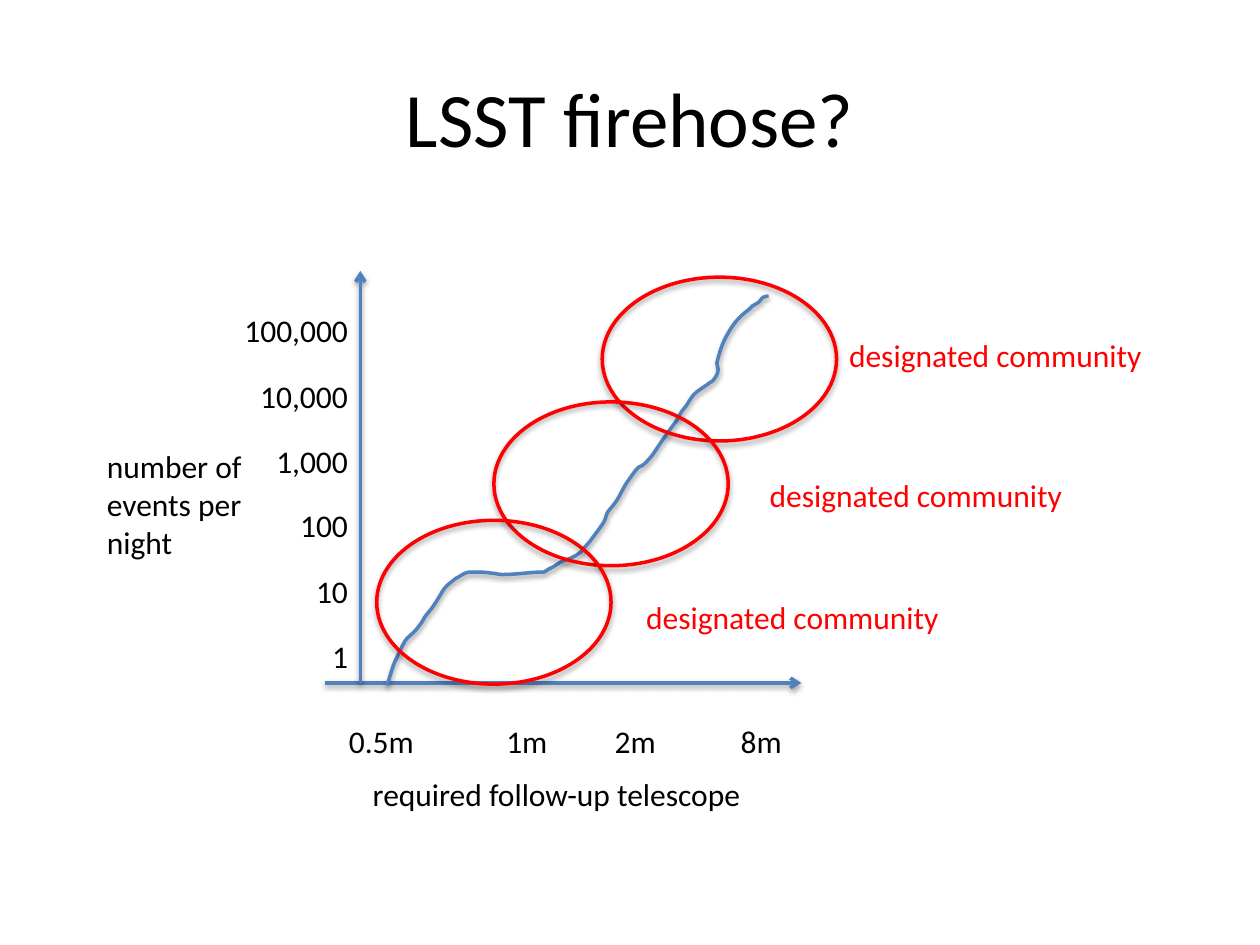
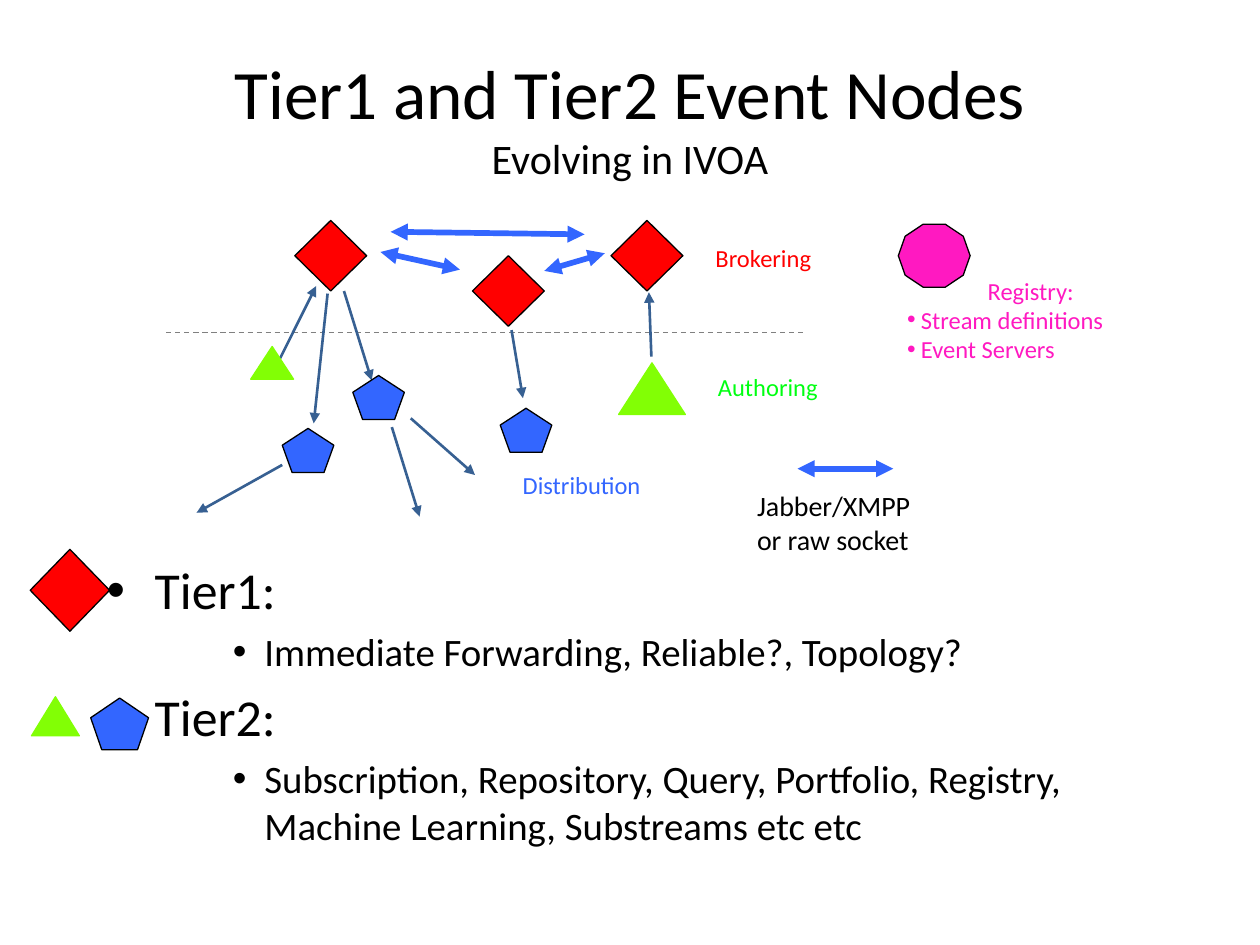
"""Build two slides on event follow-up: a telescope graph and a node network."""
from dataclasses import dataclass
from typing import Any

import lxml.etree
import pptx
import pptx.dml.color
import pptx.enum.dml
import pptx.enum.shapes
import pptx.enum.text
import pptx.oxml.ns
import pptx.slide
import pptx.util

PX = 9144
FACE = "Calibri"
BLACK, RED, AXIS = "000000", "FF0000", "4F81BD"
NAVY, BLUE, LIME = "376092", "3366FF", "82FF05"
GREEN, PINK, GRAY = "00FF12", "FF19C1", "808080"

KIND = pptx.enum.shapes.MSO_SHAPE
ALIGN = pptx.enum.text.PP_ALIGN
Slide = pptx.slide.Slide


@dataclass(frozen=True)
class Note:
    text: str
    x: int
    y: int
    w: int
    h: int = 40
    size: float = 18
    hue: str = BLACK
    wrap: bool = True
    align: Any = ALIGN.LEFT


@dataclass(frozen=True)
class Node:
    kind: Any
    x: int
    y: int
    w: int
    h: int
    fill: str | None
    edge: str = BLACK
    width: float = 0.75


@dataclass(frozen=True)
class Link:
    x: int
    y: int
    to_x: int
    to_y: int
    hue: str = NAVY
    width: float = 1.5
    head: str | None = None
    tail: str | None = "triangle"


def emu(*sizes: int) -> list[int]:
    return [size * PX for size in sizes]


def color(code: str) -> pptx.dml.color.RGBColor:
    return pptx.dml.color.RGBColor.from_string(code)


def sub(parent: Any, tag: str, **attrs: Any) -> Any:
    values = {key: str(value) for key, value in attrs.items()}
    return lxml.etree.SubElement(parent, pptx.oxml.ns.qn(f"a:{tag}"), values)


def shade(item: Any, gap: int) -> None:
    props = item._element.spPr
    found = props.find(pptx.oxml.ns.qn("a:effectLst"))
    effects = sub(props, "effectLst") if found is None else found
    cast = sub(effects, "outerShdw", blurRad=40000, dist=gap, dir=5400000, rotWithShape=0)
    tint = sub(cast, "srgbClr", val=BLACK)
    sub(tint, "alpha", val=38000 if gap == 20000 else 35000)


def ink(para: Any, size: float, hue: str = BLACK) -> None:
    para.font.name = FACE
    para.font.size = pptx.util.Pt(size)
    para.font.color.rgb = color(hue)


def bullet(para: Any, left: int, hang: int) -> None:
    props = para._p.get_or_add_pPr()
    props.set("marL", str(left * PX))
    props.set("indent", str(-hang * PX))
    marks = sub(props, "buFont", typeface="Arial"), sub(props, "buChar", char="•")
    ends = props.find(pptx.oxml.ns.qn("a:defRPr"))
    if ends is not None:
        for mark in marks:
            ends.addprevious(mark)


def write(slide: Slide, note: Note) -> Any:
    box = slide.shapes.add_textbox(*emu(note.x, note.y, note.w, note.h))
    frame = box.text_frame
    frame.word_wrap = note.wrap
    frame.auto_size = pptx.enum.text.MSO_AUTO_SIZE.SHAPE_TO_FIT_TEXT
    frame.text = note.text
    for para in frame.paragraphs:
        para.alignment = note.align
        ink(para, note.size, note.hue)
    return frame


def title(slide: Slide, *lines: tuple[str, float]) -> None:
    frame = slide.shapes.add_textbox(*emu(50, 30, 900, 125)).text_frame
    frame.word_wrap = True
    frame.vertical_anchor = pptx.enum.text.MSO_ANCHOR.MIDDLE
    para = frame.paragraphs[0]
    para.alignment = ALIGN.CENTER
    ink(para, lines[0][1])
    for rank, (text, size) in enumerate(lines):
        if rank:
            para.add_line_break()
        run = para.add_run()
        run.text = text
        run.font.size = pptx.util.Pt(size)


def style(shape: Any, fill: str | None, edge: str, width: float) -> None:
    shape.shadow.inherit = False
    if fill:
        shape.fill.solid()
        shape.fill.fore_color.rgb = color(fill)
    else:
        shape.fill.background()
    shape.line.color.rgb = color(edge)
    shape.line.width = pptx.util.Pt(width)


def place(slide: Slide, node: Node) -> Any:
    shape = slide.shapes.add_shape(node.kind, *emu(node.x, node.y, node.w, node.h))
    style(shape, node.fill, node.edge, node.width)
    return shape


def join(slide: Slide, link: Link, gap: int = 0, dash: bool = False) -> None:
    ends = emu(link.x, link.y, link.to_x, link.to_y)
    line = slide.shapes.add_connector(pptx.enum.shapes.MSO_CONNECTOR.STRAIGHT, *ends)
    line.line.color.rgb = color(link.hue)
    line.line.width = pptx.util.Pt(link.width)
    if dash:
        line.line.dash_style = pptx.enum.dml.MSO_LINE.DASH
    stroke = line.line._get_or_add_ln()
    if link.head:
        sub(stroke, "headEnd", type=link.head)
    if link.tail:
        sub(stroke, "tailEnd", type=link.tail)
    if gap:
        shade(line, gap)
    else:
        sub(line._element.spPr, "effectLst")


def bend(shape: Any) -> None:
    name = pptx.oxml.ns.qn
    track = shape._element.spPr.find(f".//{name('a:path')}")
    steps = track.findall(name("a:lnTo"))
    for first in range(0, len(steps), 3):
        curve = sub(track, "cubicBezTo")
        for step in steps[first:first + 3]:
            curve.append(step[0])
            track.remove(step)


START = (307, 544)
CURVES = [
    (310, 537, 311, 529, 315, 522), (324, 502, 322, 509, 331, 499),
    (334, 495, 335, 494, 337, 490), (339, 487, 342, 484, 344, 481),
    (354, 466, 350, 468, 362, 459), (364, 458, 367, 456, 369, 455),
    (371, 454, 373, 454, 375, 454), (380, 454, 385, 454, 391, 455),
    (393, 455, 396, 456, 399, 456), (410, 456, 421, 454, 432, 454),
    (434, 452, 437, 451, 439, 450), (441, 449, 443, 447, 445, 446),
    (452, 443, 455, 443, 461, 438), (463, 436, 465, 433, 468, 430),
    (470, 427, 478, 417, 480, 413), (481, 411, 481, 409, 482, 407),
    (484, 404, 487, 401, 489, 398), (493, 392, 495, 386, 499, 381),
    (512, 362, 504, 378, 518, 361), (524, 352, 530, 343, 537, 334),
    (539, 330, 541, 326, 544, 323), (547, 319, 549, 314, 553, 311),
    (553, 311, 566, 302, 566, 302), (568, 299, 570, 297, 570, 293),
    (570, 292, 569, 290, 569, 288), (571, 280, 573, 273, 577, 266),
    (582, 257, 586, 252, 594, 246), (595, 245, 596, 244, 597, 243),
    (599, 242, 600, 241, 602, 240), (606, 236, 604, 236, 609, 235),
    (609, 235, 610, 235, 610, 235),
]


def trace(slide: Slide) -> None:
    pen = slide.shapes.build_freeform(*START, scale=PX)
    for curve in CURVES:
        pen.add_line_segments(list(zip(curve[::2], curve[1::2])), close=False)
    shape = pen.convert_to_shape()
    bend(shape)
    style(shape, None, AXIS, 2)
    shade(shape, 20000)


def graph(slide: Slide) -> None:
    title(slide, ("LSST firehose?", 44))
    for end in ((258, 542, 636, 542), (286, 542, 286, 215)):
        join(slide, Link(*end, AXIS, 2, tail="arrow"), gap=20000)
    for text, x, wide in (("0.5m", 267, 72), ("1m", 392, 53), ("2m", 478, 53), ("8m", 578, 53)):
        write(slide, Note(text, x, 568, wide, wrap=False))
    write(slide, Note("required follow-up telescope", 286, 610, 315, wrap=False))
    write(slide, Note("number of events per night", 75, 350, 133, 101))
    for rank, wide in enumerate((119, 96, 94, 71, 54, 54)):
        text = f"{10 ** (5 - rank):,}"
        write(slide, Note(text, 286 - wide, round(242 + 51.8 * rank), wide, align=ALIGN.RIGHT))
    trace(slide)
    for x, y in ((478, 220), (392, 319), (299, 413)):
        ring = place(slide, Node(KIND.OVAL, x, y, 186, 130, None, RED, 2))
        shade(ring, 23000)
    for x, y in ((664, 262), (601, 373), (503, 470)):
        write(slide, Note("designated community", x, y, 255, hue=RED, wrap=False))


def tiers(slide: Slide) -> None:
    frame = slide.shapes.add_textbox(*emu(75, 438, 890, 220)).text_frame
    frame.word_wrap = True
    rows = (
        (0, "Tier1:"),
        (1, "Immediate Forwarding, Reliable?, Topology?"),
        (0, "Tier2:"),
        (1, "Subscription, Repository, Query, Portfolio, Registry, "
            "Machine Learning, Substreams etc etc"),
    )
    frame.text = "\n".join(text for _, text in rows)
    for para, (level, _) in zip(frame.paragraphs, rows):
        size = 22.2 if level else 29.6
        para.level = level
        para.space_before = pptx.util.Pt(round(size * 0.2, 1))
        ink(para, size)
        bullet(para, *((125, 25) if level else (38, 38)))


def network(slide: Slide) -> None:
    title(slide, ("Tier1 and Tier2 Event Nodes", 39.6), ("Evolving in IVOA", 24))
    tiers(slide)
    join(slide, Link(132, 264, 637, 264, GRAY, 0.75, tail=None), dash=True)
    for ends in (
        (273, 231, 295, 302), (221, 287, 251, 227), (260, 233, 249, 336),
        (326, 332, 377, 377), (311, 339, 333, 410), (224, 369, 156, 407),
        (406, 262, 415, 316), (517, 283, 515, 232),
    ):
        join(slide, Link(*ends))
    for ends in ((633, 372, 709, 372), (302, 200, 365, 214),
                 (432, 215, 480, 201), (310, 184, 464, 186)):
        join(slide, Link(*ends, BLUE, 3.25, "triangle"))
    for spot in ((24, 436, 63, 65), (234, 175, 57, 56), (375, 203, 57, 56), (485, 175, 57, 56)):
        place(slide, Node(KIND.DIAMOND, *spot, RED))
    for spot in ((72, 554, 46, 41), (280, 298, 41, 35), (224, 340, 41, 35), (397, 324, 41, 35)):
        place(slide, Node(KIND.REGULAR_PENTAGON, *spot, BLUE))
    for spot in ((25, 553, 38, 31), (199, 275, 34, 26), (491, 288, 53, 41)):
        place(slide, Node(KIND.ISOSCELES_TRIANGLE, *spot, LIME, LIME))
    place(slide, Node(KIND.DECAGON, 713, 178, 57, 50, PINK))
    for note in (
        Note("Brokering", 558, 188, 101, 34, 14, RED),
        Note("Authoring", 560, 290, 104, 34, 14, GREEN),
        Note("Distribution", 405, 368, 121, 34, 14, BLUE),
        Note("Registry:", 774, 214, 93, 34, 14, PINK),
        Note("Jabber/XMPP\nor raw socket", 591, 383, 218, 64, 16),
    ):
        write(slide, note)
    listing = write(slide, Note("Stream definitions\nEvent Servers", 710, 237, 185, 57, 14, PINK))
    for para in listing.paragraphs:
        bullet(para, 11, 11)


def main() -> None:
    deck = pptx.Presentation()
    deck.slide_width, deck.slide_height = emu(1000, 750)
    for draw in (graph, network):
        draw(deck.slides.add_slide(deck.slide_layouts[6]))
    deck.save("out.pptx")


if __name__ == "__main__":
    main()
